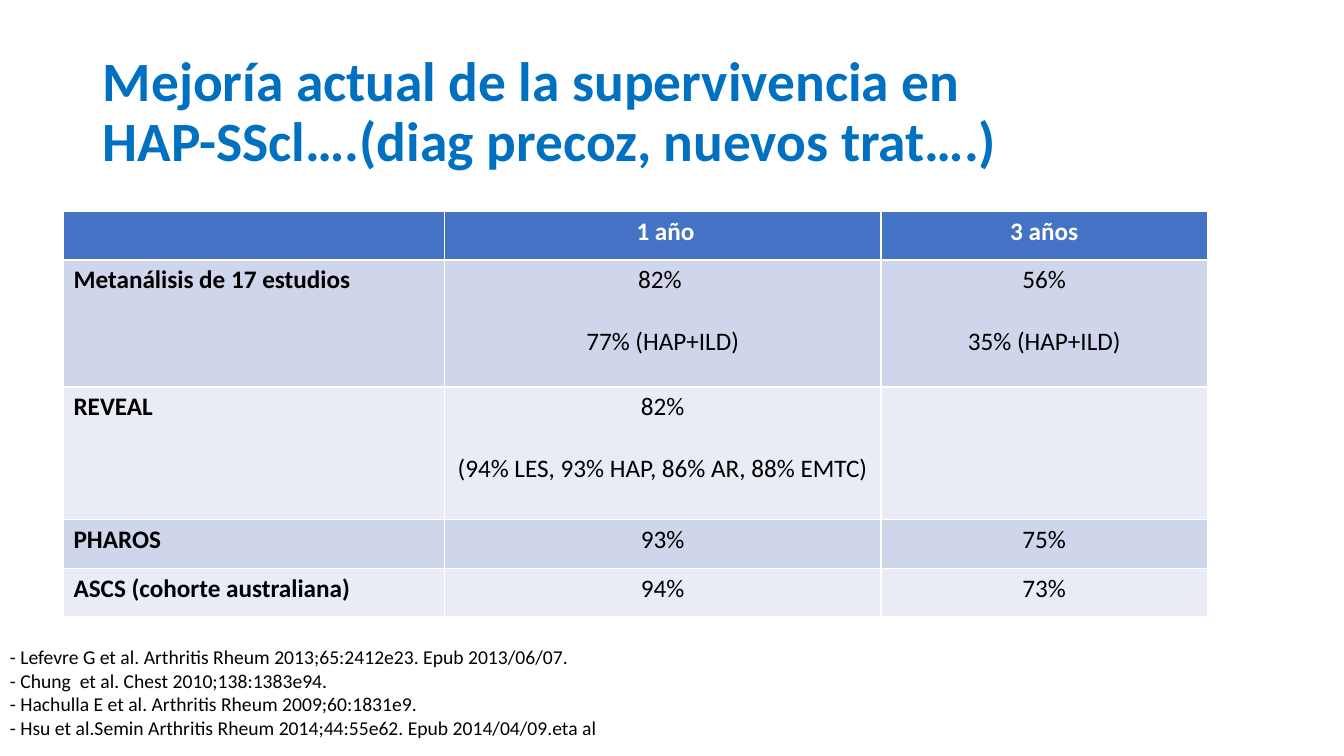
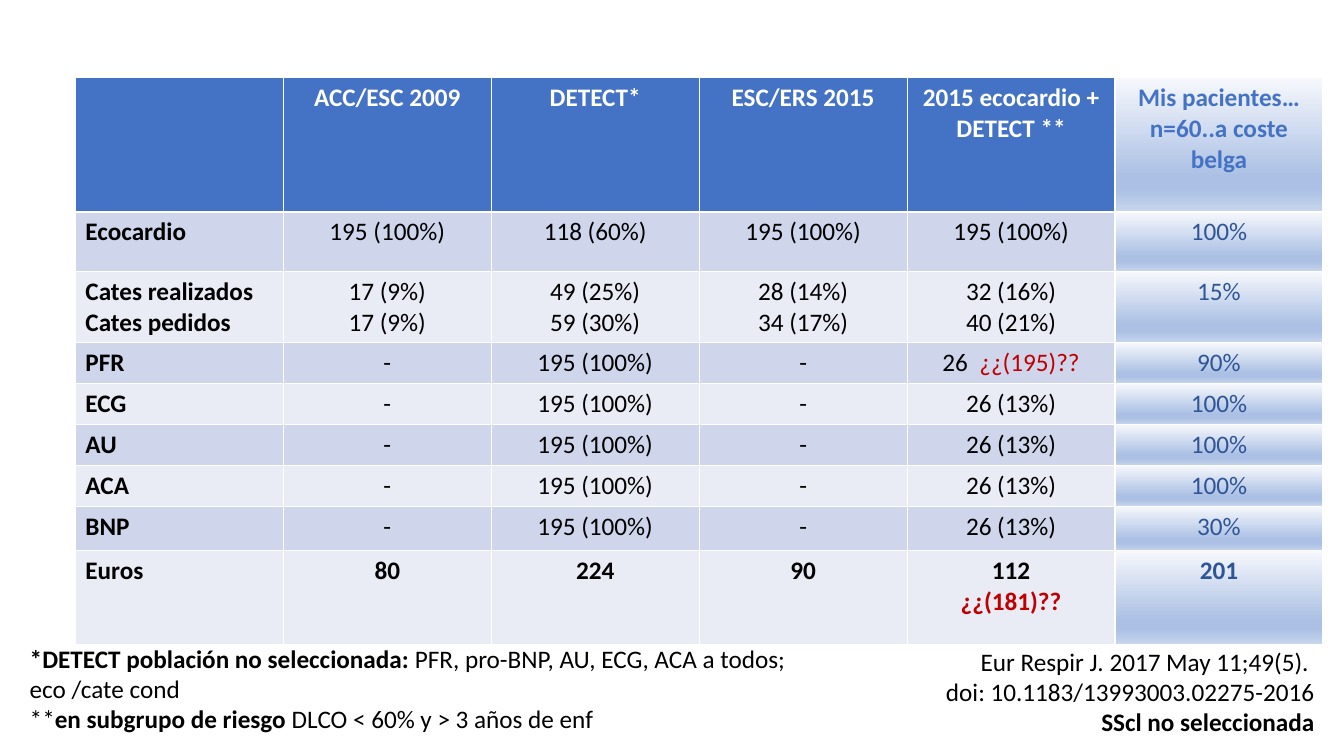
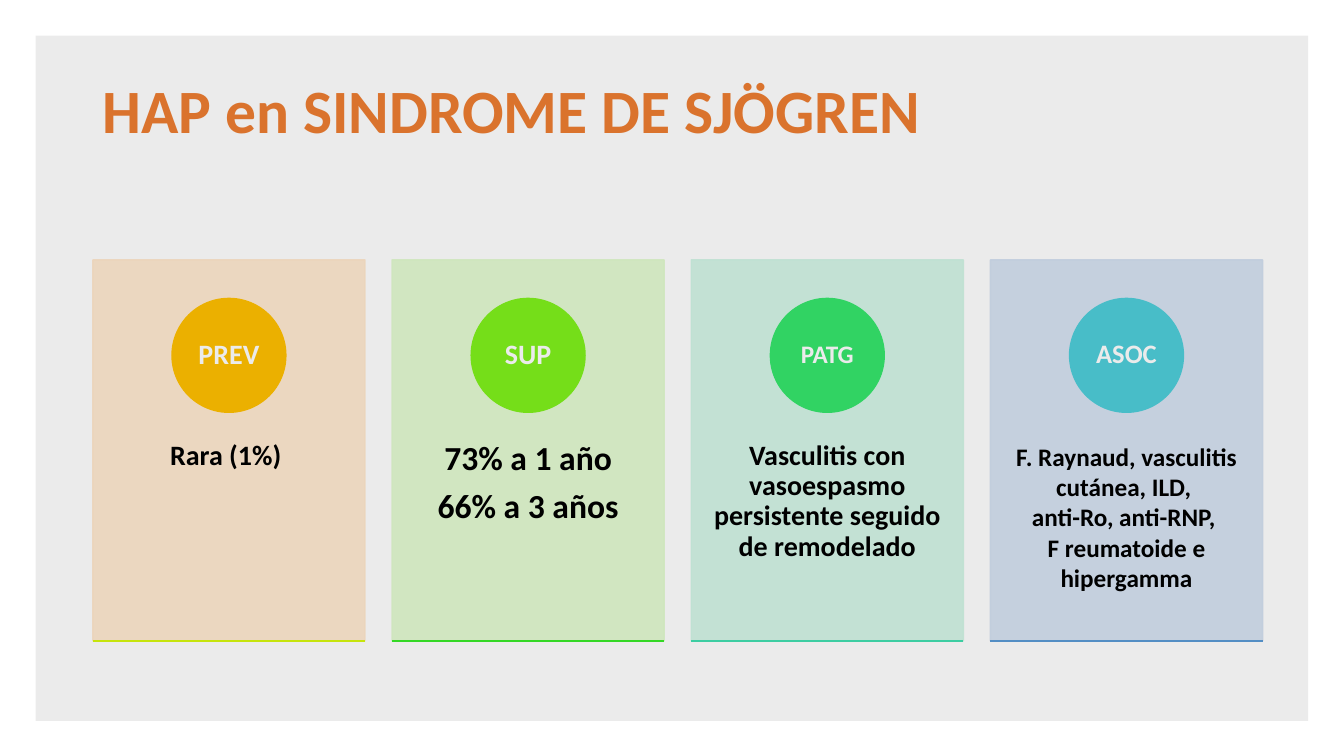
from dataclasses import dataclass

from lxml.etree import SubElement
from pptx import Presentation
from pptx.dml.color import RGBColor
from pptx.enum.shapes import MSO_CONNECTOR, MSO_SHAPE
from pptx.enum.text import MSO_ANCHOR as ANCHOR, PP_ALIGN as ALIGN
from pptx.oxml import parse_xml
from pptx.oxml.ns import nsdecls, qn
from pptx.util import Cm, Pt


@dataclass(frozen=True)
class Theme:
    font: str = "Calibri"
    black: str = "000000"
    white: str = "FFFFFF"
    blue_title: str = "0070C0"
    orange_title: str = "ED7D31"
    header: str = "4472C4"
    bands: tuple = ("CFD5EA", "E9EBF5")
    own_data: str = "2F5597"
    doubt: str = "C00000"
    gradient: tuple = ((0, "F6F8FC"), (74, "ABC0E4"), (83, "ABC0E4"), (100, "C7D5ED"))
    title_size: float = 44
    long_title_size: float = 39.6
    body_size: float = 18
    note_size: float = 14


T = Theme()
DOUBT = {"color": T.doubt}
BOLD, PLAIN = {"bold": True}, {"bold": False}

# Content: a paragraph is a string or a list of runs; a run is a string or (string, format).
SURVIVAL_TITLE = ["Mejoría actual de la supervivencia en ", "\n",
                  "HAP-SScl….(diag precoz, nuevos trat….)"]
SURVIVAL_ROWS = [
    ["", " 1 año", "3 años"],
    ["Metanálisis de 17 estudios", ("82% ", "77% (HAP+ILD)"), ("56%", "35% (HAP+ILD)")],
    ["REVEAL", ("82%", "(94% LES, 93% HAP, 86% AR, 88% EMTC)"), ""],
    ["PHAROS", "93%", "75%"],
    ["ASCS (cohorte australiana)", "94%", "73%"],
]
REFERENCES = (
    "- Lefevre G et al. Arthritis Rheum 2013;65:2412e23. Epub 2013/06/07.",
    "- Chung  et al. Chest 2010;138:1383e94.",
    "- Hachulla E et al. Arthritis Rheum 2009;60:1831e9.",
    "- Hsu et al.Semin Arthritis Rheum 2014;44:55e62. Epub 2014/04/09.eta al",
)

ALL, SOME = "195 (100%)", "26 (13%)"
SCREENING_ROWS = [
    ["", "ACC/ESC 2009", "DETECT*", "ESC/ERS 2015", "2015 ecocardio + DETECT **",
     "Mis pacientes…n=60..a coste belga"],
    ["Ecocardio", ALL, "118 (60%)", ALL, ALL, "100%"],
    [("Cates realizados", "Cates pedidos"), ("17 (9%)", "17 (9%)"), ("49 (25%)", "59 (30%)"),
     ("28 (14%)", "34 (17%)"), ("32 (16%)", "40 (21%)"), "15%"],
    ["PFR", "-", ALL, "-", (["26  ", ("¿¿(195)??", DOUBT)],), "90%"],
    ["ECG", "-", ALL, "-", SOME, "100%"],
    ["AU", "-", ALL, "-", SOME, "100%"],
    ["ACA", "-", ALL, "-", SOME, "100%"],
    ["BNP", "-", ALL, "-", SOME, "30%"],
    ["Euros", "80", "224", "90", ("112", [("¿¿(181)??", DOUBT)]), "201"],
]
SCREENING_SOURCE = (
    "Eur Respir J. 2017 May 11;49(5). ",
    "doi: 10.1183/13993003.02275-2016",
    [("SScl no seleccionada", BOLD)],
)
SCREENING_NOTES = (
    [("*DETECT población no seleccionada: ", BOLD),
     "PFR, pro-BNP, AU, ECG, ACA a todos; eco /cate cond"],
    ["**", ("en subgrupo de riesgo ", BOLD), "DLCO < 60% y > 3 años de enf"],
)

SJOGREN_TITLE = "HAP en SINDROME DE SJÖGREN"
SJOGREN_CARDS = [
    dict(label="PREV", label_size=20, card="FFE8CC", disc="FFC000", base="D7F80E",
         text=("Rara (1%) ",), size=20, spacing=0.9),
    dict(label="SUP", label_size=20, card="E1FACE", disc="80F11C", base="39EB29",
         text=("73% a 1 año", "66% a 3 años"), size=24, spacing=0.9, gap=8.4),
    dict(label="PATG", label_size=18, card="D0F5E5", disc="36E56C", base="43DFB0",
         text=("Vasculitis con vasoespasmo persistente seguido de remodelado",),
         size=20, spacing=0.9),
    dict(label="ASOC", label_size=19, card="D2DFF0", disc="4FCEDA", base="5B9BD5",
         text=("F. Raynaud, vasculitis cutánea, ILD, ", "anti-Ro, anti-RNP, ",
               "F reumatoide e hipergamma"), size=18, spacing=1.0),
]


def rgb(color):
    return RGBColor.from_string(color)


def set_all(target, **values):
    for name, value in values.items():
        setattr(target, name, value)


def write(tf, paragraphs, size=T.body_size, color=T.black, bold=False,
          align=ALIGN.LEFT, spacing=1.0, gap=0):
    """Fill a text frame; gap is the space in points between paragraphs."""
    if isinstance(paragraphs, str):
        paragraphs = (paragraphs,)
    for i, runs in enumerate(paragraphs):
        p = tf.add_paragraph() if i else tf.paragraphs[0]
        set_all(p, alignment=align, line_spacing=spacing, space_before=Pt(gap if i else 0))
        for run in [runs] if isinstance(runs, str) else runs:
            if run == "\n":
                p.add_line_break()
                continue
            text, extra = (run, {}) if isinstance(run, str) else run
            look = {"color": color, "bold": bold, **extra}
            r = p.add_run()
            r.text = text
            set_all(r.font, name=T.font, size=Pt(size), bold=look["bold"])
            r.font.color.rgb = rgb(look["color"])


def add_text(s, left, top, width, height, paragraphs, anchor=ANCHOR.TOP, **look):
    tf = s.shapes.add_textbox(Cm(left), Cm(top), Cm(width), Cm(height)).text_frame
    set_all(tf, word_wrap=True, vertical_anchor=anchor)
    write(tf, paragraphs, **look)


def add_title(s, runs, color, size=T.title_size):
    add_text(s, 2.34, 1.02, 29.21, 3.68, (runs,), ANCHOR.MIDDLE,
             size=size, color=color, bold=True, spacing=0.9)


def set_alpha(fill, percent):
    color = fill.fore_color
    color.rgb = color.rgb
    clr = fill._xPr.find(qn("a:solidFill"))[0]
    SubElement(clr, qn("a:alpha")).set("val", str(percent * 1000))


def add_box(s, kind, left, top, width, height, color, alpha=100, outlined=True):
    sp = s.shapes.add_shape(kind, Cm(left), Cm(top), Cm(width), Cm(height))
    sp.shadow.inherit = False
    paints = [sp.fill]
    if outlined:
        sp.line.width = Pt(1)
        paints.append(sp.line.fill)
    else:
        sp.line.fill.background()
    for fill in paints:
        fill.solid()
        fill.fore_color.rgb = rgb(color)
        if alpha < 100:
            set_alpha(fill, alpha)
    return sp


def add_rule(s, left, top, width, color):
    cn = s.shapes.add_connector(MSO_CONNECTOR.STRAIGHT, Cm(left), Cm(top),
                                Cm(left + width), Cm(top))
    cn.line.width = Pt(1)
    cn.line.color.rgb = rgb(color)
    SubElement(cn._element.spPr, qn("a:effectLst"))


def fill_gradient(cell):
    stops = "".join(f'<a:gs pos="{pos * 1000}"><a:srgbClr val="{color}"/></a:gs>'
                    for pos, color in T.gradient)
    cell._tc.get_or_add_tcPr().append(parse_xml(
        f'<a:gradFill {nsdecls("a")}><a:gsLst>{stops}</a:gsLst>'
        '<a:lin ang="5400000" scaled="0"/></a:gradFill>'))


def add_data_table(s, left, top, widths, heights, rows, gap=0, own_column=None, bold_row=None):
    """Banded table; own_column gets the gradient, bold_row is bold throughout."""
    table = s.shapes.add_table(len(rows), len(widths), Cm(left), Cm(top),
                               Cm(sum(widths)), Cm(sum(heights))).table
    for column, width in zip(table.columns, widths):
        column.width = Cm(width)
    for i, (row, height) in enumerate(zip(rows, heights)):
        table.rows[i].height = Cm(height)
        for j, content in enumerate(row):
            cell, own = table.cell(i, j), j == own_column
            if own:
                fill_gradient(cell)
                color = T.own_data if i else T.header
            else:
                cell.fill.solid()
                cell.fill.fore_color.rgb = rgb(T.bands[(i - 1) % 2] if i else T.header)
                color = T.black if i else T.white
            write(cell.text_frame, content, color=color, gap=gap,
                  bold=i in (0, bold_row) or j == 0,
                  align=ALIGN.CENTER if j else ALIGN.LEFT)


def survival_slide(s):
    add_title(s, SURVIVAL_TITLE, T.blue_title, T.long_title_size)
    add_data_table(s, 1.6, 5.33, (9.6, 11, 8.23), (1.22, 3.2, 3.35, 1.22, 1.22),
                   SURVIVAL_ROWS, gap=22)
    add_text(s, 0, 16.13, 33.87, 2.64, REFERENCES, size=T.note_size)


def screening_slide(s):
    add_data_table(s, 1.9, 1.96, [5.24] * 6,
                   (3.38, 1.5, 1.8, 1.03, 1.03, 1.03, 1.03, 1.12, 2.36),
                   SCREENING_ROWS, own_column=5, bold_row=len(SCREENING_ROWS) - 1)
    add_text(s, 17.2, 16.15, 16.18, 2.57, SCREENING_SOURCE, align=ALIGN.RIGHT)
    add_text(s, 0.5, 16.08, 20.5, 3.33, SCREENING_NOTES)


def sjogren_slide(s):
    add_title(s, SJOGREN_TITLE, T.orange_title)
    first, pitch, top, width, height = 2.34, 7.54, 6.55, 6.86, 9.6
    disc_size = 2.87
    for i, card in enumerate(SJOGREN_CARDS):
        left = first + i * pitch
        sp = add_box(s, MSO_SHAPE.RECTANGLE, left, top, width, height, card["card"], alpha=90)
        set_all(sp.text_frame, word_wrap=True, vertical_anchor=ANCHOR.TOP,
                margin_left=Cm(0.53), margin_right=Cm(0.53), margin_top=Cm(4.57))
        write(sp.text_frame, card["text"], size=card["size"], bold=True, align=ALIGN.CENTER,
              spacing=card["spacing"], gap=card.get("gap", 0))
        disc = add_box(s, MSO_SHAPE.OVAL, left + (width - disc_size) / 2, top + 0.97,
                       disc_size, disc_size, card["disc"])
        set_all(disc.text_frame, word_wrap=False, vertical_anchor=ANCHOR.MIDDLE,
                margin_left=0, margin_right=0, margin_top=0, margin_bottom=0)
        write(disc.text_frame, card["label"], size=card["label_size"], color=T.white,
              bold=True, align=ALIGN.CENTER, spacing=0.9)
        add_rule(s, left, top + height, width, card["base"])
    add_box(s, MSO_SHAPE.RECTANGLE, 0.9, 0.9, 32.07, 17.27, T.black, alpha=8, outlined=False)


def main():
    prs = Presentation()
    set_all(prs, slide_width=Cm(33.87), slide_height=Cm(19.05))
    for build in (survival_slide, screening_slide, sjogren_slide):
        build(prs.slides.add_slide(prs.slide_layouts[6]))
    prs.save("out.pptx")


if __name__ == "__main__":
    main()
